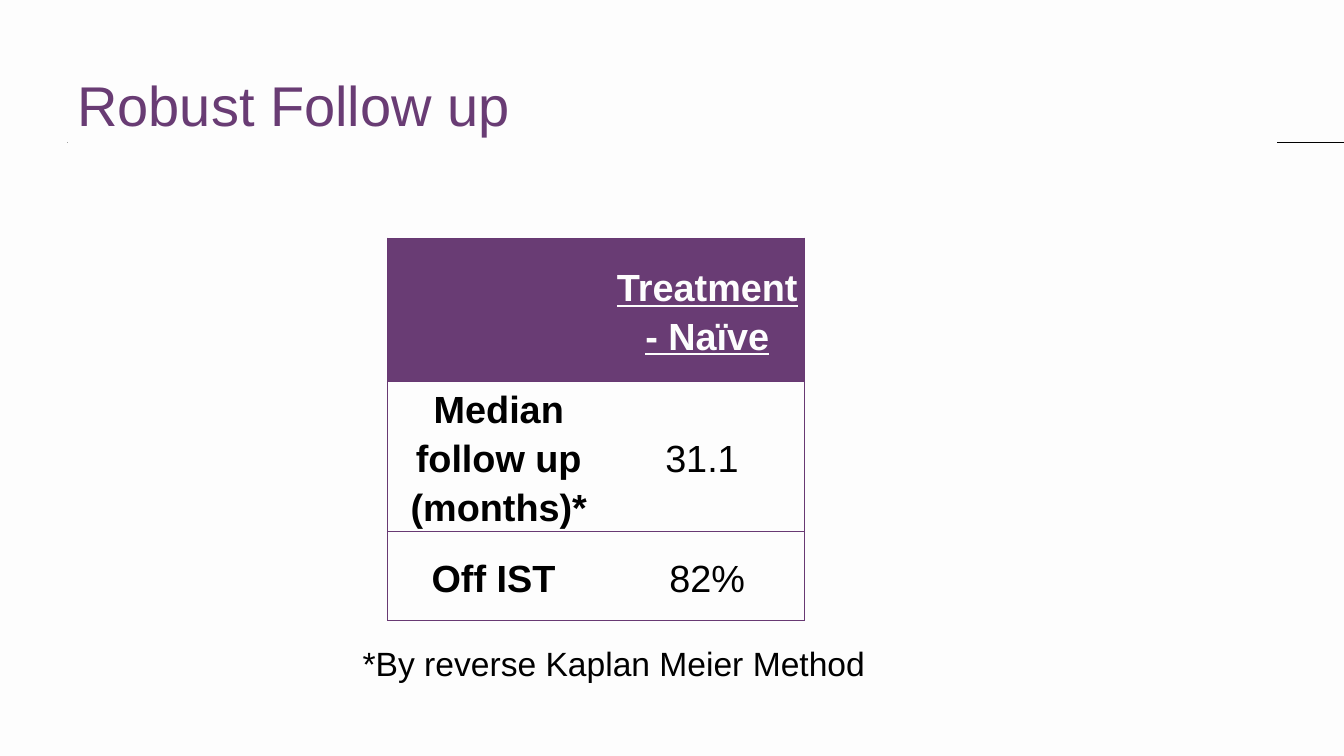
from lxml.etree import SubElement
from pptx import Presentation
from pptx.dml.color import RGBColor
from pptx.enum.shapes import MSO_CONNECTOR, MSO_SHAPE
from pptx.enum.text import MSO_ANCHOR, PP_ALIGN
from pptx.oxml import parse_xml
from pptx.oxml.ns import nsdecls, qn
from pptx.util import Cm, Pt

PURPLE = "693C74"
BORDER = "683973"
PAPER = "FDFDFD"
BLACK = "000000"
SLIDE_WIDTH, SLIDE_HEIGHT = 33.87, 19.05
COLUMN_WIDTHS = [5.6, 4.91]
ROW_HEIGHTS = [3.6, 3.79, 2.24]
ROWS = [
    ["", "Treatment- Naïve"],
    ["Median follow up (months)*", "31.1 "],
    ["Off IST ", "82%"],
]


def color(value):
    return RGBColor.from_string(value)


def style(para, size, value, bold=False, underline=False):
    for span in para.runs:
        span.font.name = "Arial"
        span.font.size = Pt(size)
        span.font.color.rgb = color(value)
        span.font.bold = bold
        span.font.underline = underline


def add_title(page, left, top, width, height):
    rule = page.shapes.add_connector(
        MSO_CONNECTOR.STRAIGHT, Cm(left), Cm(top + height), Cm(SLIDE_WIDTH), Cm(top + height)
    )
    rule.line.color.rgb = color(BLACK)
    rule.line.width = Pt(0.75)
    SubElement(rule._element.spPr, qn("a:effectLst"))

    box = page.shapes.add_shape(MSO_SHAPE.RECTANGLE, Cm(left), Cm(top), Cm(width), Cm(height))
    box.shadow.inherit = False
    box.fill.solid()
    box.fill.fore_color.rgb = color(PAPER)
    box.line.fill.background()
    frame = box.text_frame
    frame.word_wrap = True
    frame.vertical_anchor = MSO_ANCHOR.BOTTOM
    frame.text = "Robust Follow up"
    frame.paragraphs[0].alignment = PP_ALIGN.LEFT
    style(frame.paragraphs[0], 40, PURPLE)


def set_borders(cell, visible_sides):
    properties = cell._tc.get_or_add_tcPr()
    for position, side in enumerate("LRTB"):
        paint = "<a:noFill/>"
        if side in visible_sides:
            paint = f'<a:solidFill><a:srgbClr val="{BORDER}"/></a:solidFill>'
        border = parse_xml(f'<a:ln{side} {nsdecls("a")} w="{Pt(0.75)}">{paint}</a:ln{side}>')
        properties.insert(position, border)


def add_follow_up_table(page, left, top):
    frame = page.shapes.add_table(
        len(ROWS), len(COLUMN_WIDTHS), Cm(left), Cm(top),
        Cm(sum(COLUMN_WIDTHS)), Cm(sum(ROW_HEIGHTS)),
    )
    table = frame.table
    for column, width in zip(table.columns, COLUMN_WIDTHS):
        column.width = Cm(width)
    for row, height in zip(table.rows, ROW_HEIGHTS):
        row.height = Cm(height)

    for row_index, texts in enumerate(ROWS):
        is_header = row_index == 0
        for column_index, text in enumerate(texts):
            cell = table.cell(row_index, column_index)
            cell.fill.solid()
            cell.fill.fore_color.rgb = color(PURPLE if is_header else PAPER)
            set_borders(cell, "TB" + "LR"[column_index])
            cell.vertical_anchor = MSO_ANCHOR.MIDDLE
            cell.margin_left = cell.margin_right = Cm(0.1)
            cell.margin_top = cell.margin_bottom = Cm(0)
            if not text:
                continue
            cell.text_frame.text = text
            para = cell.text_frame.paragraphs[0]
            para.alignment = PP_ALIGN.CENTER
            para.line_spacing = 1.15
            para.space_after = Pt(10)
            style(para, 27, PAPER if is_header else BLACK,
                  bold=is_header or column_index == 0, underline=is_header)


def add_footnote(page, left, top, width, height):
    box = page.shapes.add_textbox(Cm(left), Cm(top), Cm(width), Cm(height))
    box.text_frame.word_wrap = False
    box.text_frame.text = "*By reverse Kaplan Meier Method"
    style(box.text_frame.paragraphs[0], 24, BLACK)


def main():
    deck = Presentation()
    deck.slide_width = Cm(SLIDE_WIDTH)
    deck.slide_height = Cm(SLIDE_HEIGHT)
    page = deck.slides.add_slide(deck.slide_layouts[6])
    page.background.fill.solid()
    page.background.fill.fore_color.rgb = color(PAPER)
    add_title(page, 1.7, 0.76, 30.48, 2.84)
    add_follow_up_table(page, 9.77, 6)
    add_footnote(page, 8.89, 16.08, 13.31, 1.28)
    deck.save("out.pptx")


if __name__ == "__main__":
    main()
